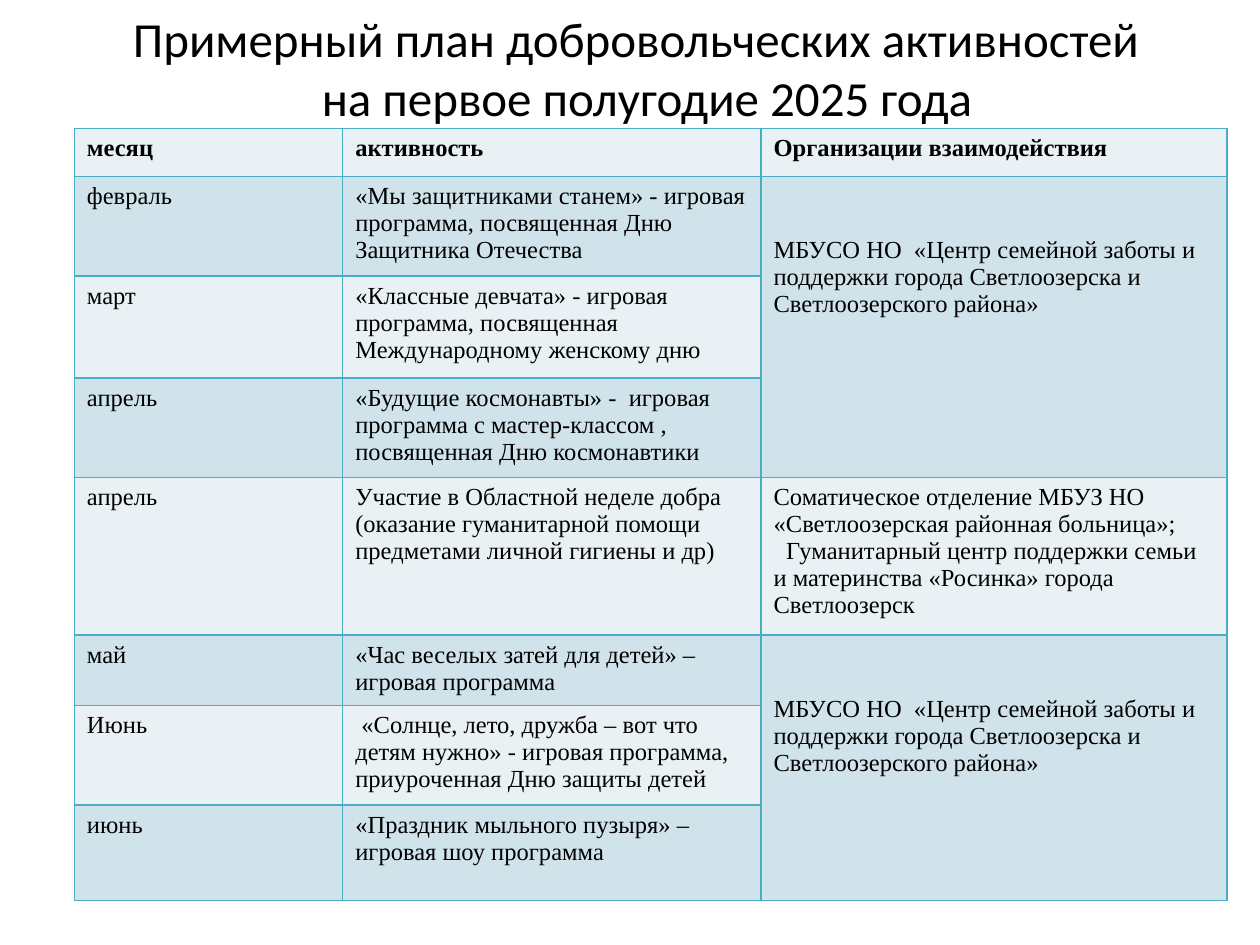
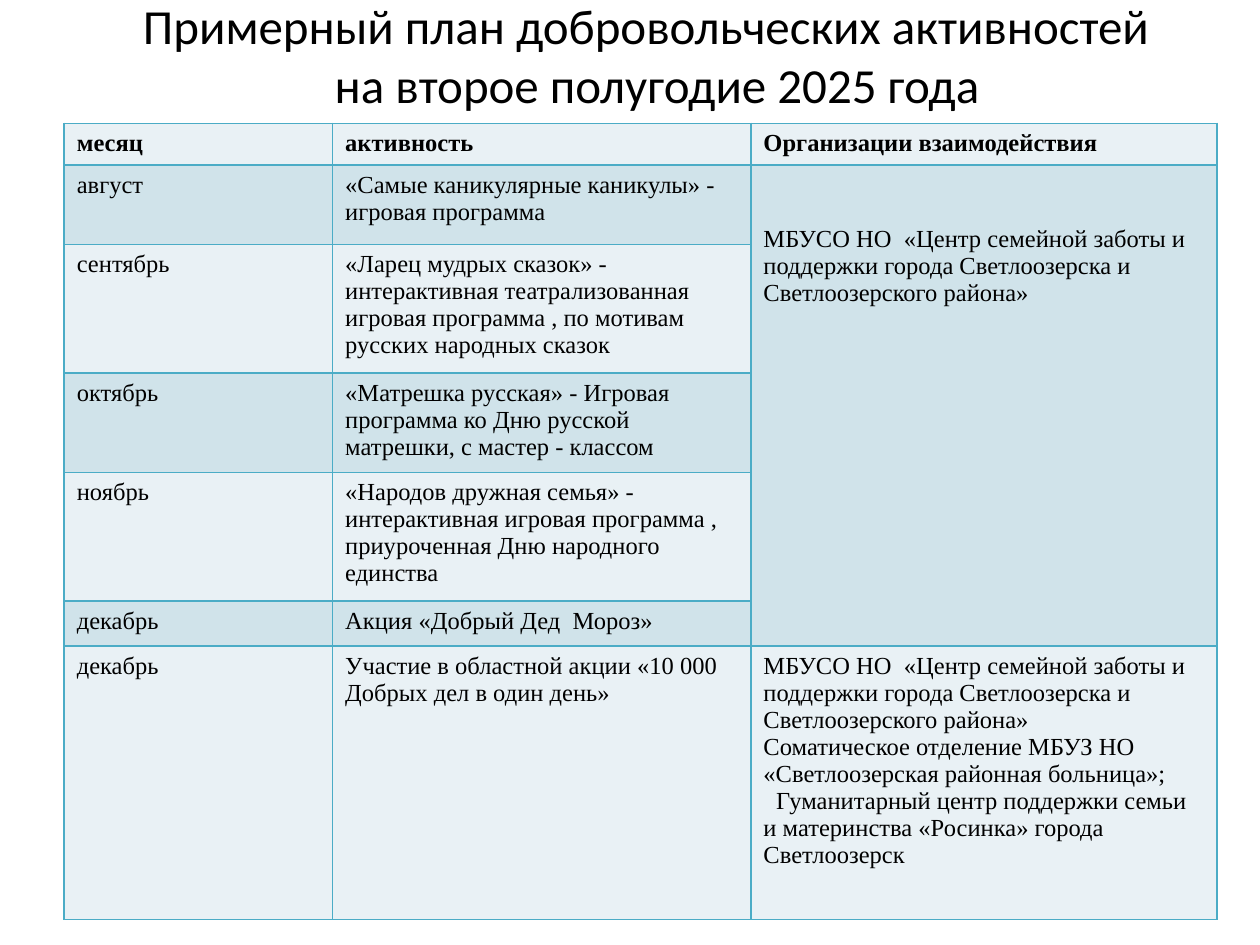
from lxml.etree import SubElement
from pptx import Presentation
from pptx.dml.color import RGBColor
from pptx.enum.text import MSO_ANCHOR as Anchor, MSO_AUTO_SIZE as AutoSize, PP_ALIGN as Align
from pptx.oxml.ns import qn
from pptx.util import Inches, Pt

BLACK, BORDER = "000000", "4BACC6"
BANDS = ("E9F1F5", "D0E3EA")
TITLE_FONT = dict(name="Calibri", size=Pt(28), bold=False)
HEAD_FONT = dict(name="Times New Roman", size=Pt(14), bold=True)
BODY_FONT = {**HEAD_FONT, "bold": False}
COLUMNS = (2.13, 3.32, 3.7)
HEADER = ("месяц", "активность", "Организации взаимодействия")

FAMILY_CENTRE = "МБУСО НО  «Центр семейной заботы и поддержки города Светлоозерска и Светлоозерского района»"
HOSPITAL = "Соматическое отделение МБУЗ НО «Светлоозерская районная больница»;"
HUMANITARIAN_CENTRE = "Гуманитарный центр поддержки семьи и материнства «Росинка» города Светлоозерск"

FIRST_HALF = (
    ("февраль", "«Мы защитниками станем» - игровая программа, посвященная Дню Защитника Отечества"),
    ("март", "«Классные девчата» - игровая программа, посвященная Международному женскому дню"),
    ("апрель", "«Будущие космонавты» -  игровая программа с мастер-классом , посвященная Дню космонавтики"),
    ("апрель", "Участие в Областной неделе добра  (оказание гуманитарной помощи  предметами личной гигиены и др)"),
    ("май", "«Час веселых затей для детей» – игровая программа"),
    ("Июнь", " «Солнце, лето, дружба – вот что детям нужно» - игровая программа, приуроченная Дню защиты детей"),
    ("июнь", "«Праздник мыльного пузыря» – игровая шоу программа"),
)
SECOND_HALF = (
    ("август", "«Самые каникулярные каникулы» - игровая программа"),
    ("сентябрь", "«Ларец мудрых сказок» - интерактивная театрализованная игровая программа , "
                 "по мотивам русских народных сказок"),
    ("октябрь", "«Матрешка русская» - Игровая программа ко Дню русской матрешки, с мастер - классом"),
    ("ноябрь", "«Народов дружная семья» - интерактивная игровая программа , приуроченная Дню народного единства"),
    ("декабрь", "Акция «Добрый Дед  Мороз»"),
    ("декабрь", "Участие в областной акции «10 000 Добрых дел в один день»"),
)


def rgb(value):
    return RGBColor.from_string(value)


def set_font(font, style):
    for key, value in style.items():
        setattr(font, key, value)
    font.color.rgb = rgb(BLACK)


def add_title(s, half, left, top):
    title = s.shapes.title
    box = dict(left=left, top=top, width=9, height=1.25)
    for key, value in box.items():
        setattr(title, key, Inches(value))
    tf = title.text_frame
    for key, value in dict(word_wrap=True, auto_size=AutoSize.NONE, vertical_anchor=Anchor.MIDDLE).items():
        setattr(tf, key, value)
    p = tf.paragraphs[0]
    p.text = f"Примерный план добровольческих активностей \v на {half} полугодие 2025 года"
    p.alignment = Align.CENTER
    for r in p.runs:
        set_font(r.font, TITLE_FONT)


def add_borders(cell):
    tc_pr = cell._tc.get_or_add_tcPr()
    for position, side in enumerate(("lnL", "lnR", "lnT", "lnB")):
        line = SubElement(tc_pr, qn(f"a:{side}"), w=str(Pt(1)))
        fill = SubElement(line, qn("a:solidFill"))
        SubElement(fill, qn("a:srgbClr"), val=BORDER)
        tc_pr.insert(position, line)


def write_cell(cell, paragraphs, style):
    tf = cell.text_frame
    for i, text in enumerate(paragraphs):
        p = tf.add_paragraph() if i else tf.paragraphs[0]
        r = p.add_run()
        r.text = text
        set_font(r.font, style)
        if text == HUMANITARIAN_CENTRE:
            p._p.get_or_add_pPr().set("indent", str(Inches(0.1)))


def add_plan(s, left, top, heights, activities, partners):
    frame = s.shapes.add_table(len(heights), len(COLUMNS), Inches(left), Inches(top),
                               Inches(sum(COLUMNS)), Inches(sum(heights)))
    table = frame.table
    for column, width in zip(table.columns, COLUMNS):
        column.width = Inches(width)
    for i, (row, height) in enumerate(zip(table.rows, heights)):
        row.height = Inches(height)
        for cell in row.cells:
            cell.fill.solid()
            cell.fill.fore_color.rgb = rgb(BANDS[i % 2])
            add_borders(cell)
    for i, texts in enumerate((HEADER, *activities)):
        for j, text in enumerate(texts):
            write_cell(table.cell(i, j), [text], BODY_FONT if i else HEAD_FONT)
    first = 1
    for span, paragraphs in partners:
        cell = table.cell(first, 2)
        if span > 1:
            cell.merge(table.cell(first + span - 1, 2))
            cell.margin_top = Inches(0.48)
        write_cell(cell, paragraphs, BODY_FONT)
        first += span


def add_slide(prs, half, title_at, table_at, heights, activities, partners):
    s = prs.slides.add_slide(prs.slide_layouts[5])
    add_title(s, half, *title_at)
    add_plan(s, *table_at, heights, activities, partners)


def main():
    prs = Presentation()
    prs.slide_width, prs.slide_height = Inches(10), Inches(7.5)
    add_slide(prs, "первое", (0.59, -0.09), (0.59, 1.02),
              (0.38, 0.79, 0.81, 0.79, 1.25, 0.56, 0.79, 0.76), FIRST_HALF,
              ((3, [FAMILY_CENTRE]), (1, [HOSPITAL, HUMANITARIAN_CENTRE]), (3, [FAMILY_CENTRE])))
    add_slide(prs, "второе", (0.67, -0.19), (0.51, 0.98),
              (0.33, 0.63, 1.02, 0.79, 1.02, 0.36, 2.17), SECOND_HALF,
              ((5, [FAMILY_CENTRE]), (1, [FAMILY_CENTRE, HOSPITAL, HUMANITARIAN_CENTRE])))
    prs.save("out.pptx")


if __name__ == "__main__":
    main()
